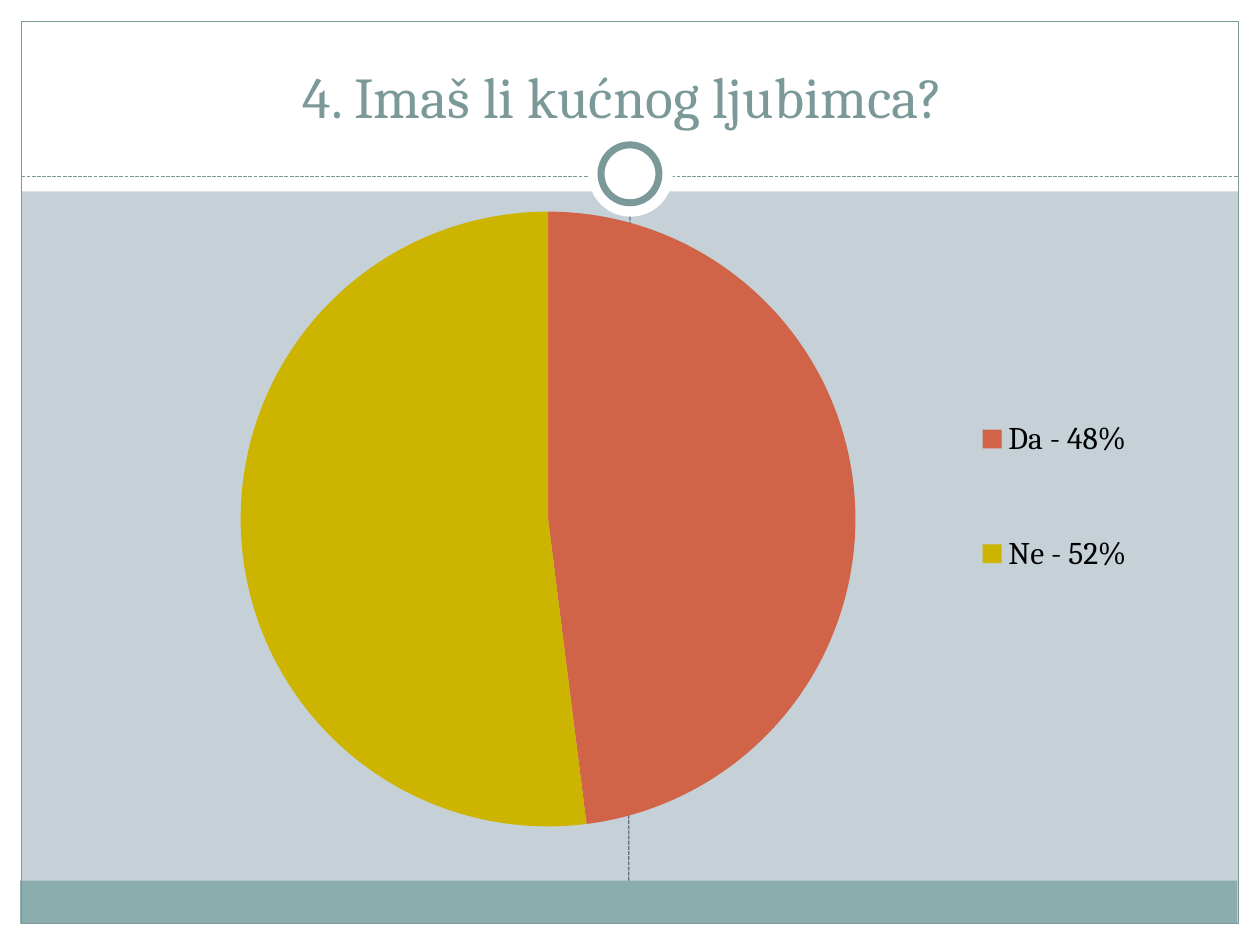
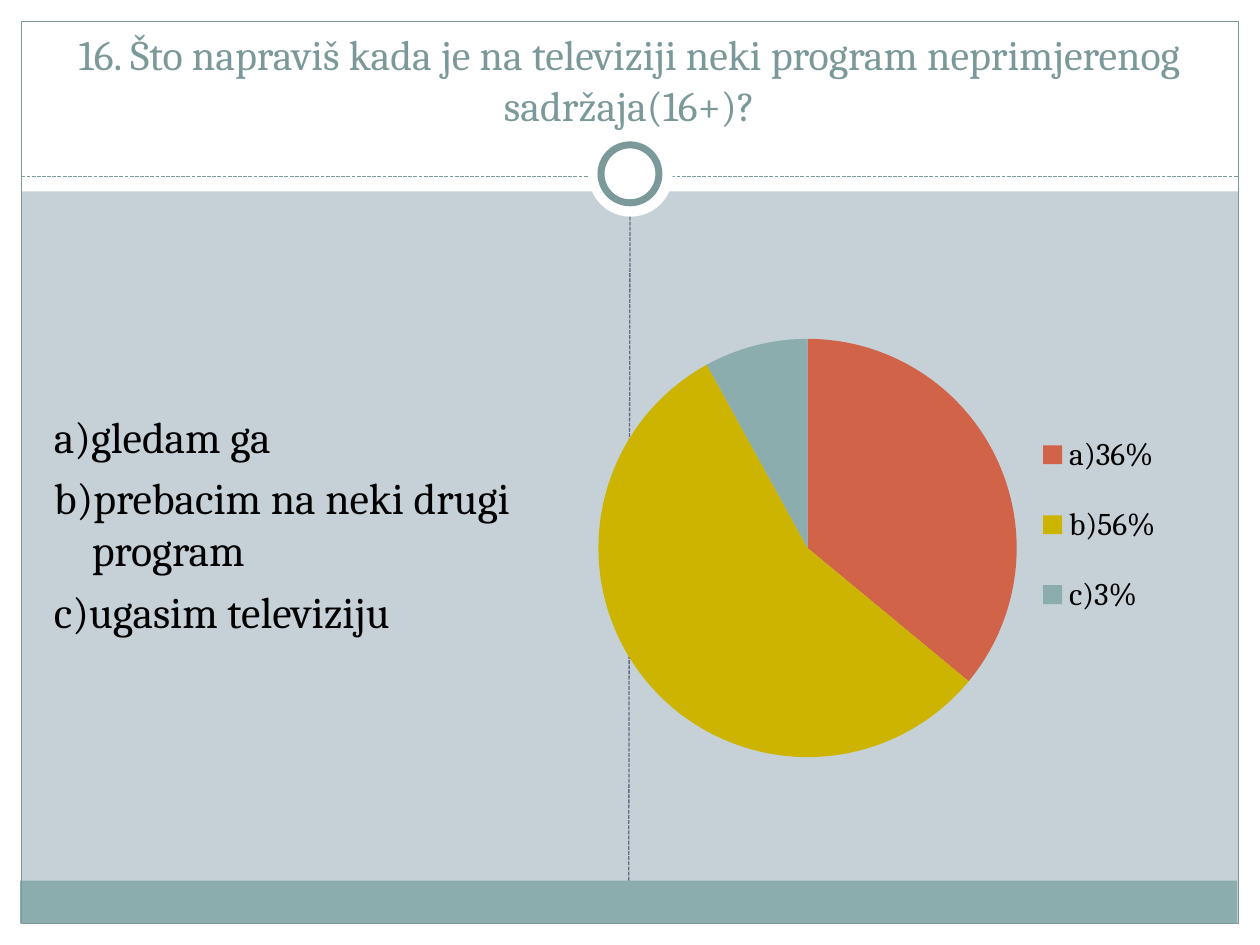
from lxml.etree import SubElement
from pptx import Presentation
from pptx.chart.data import CategoryChartData
from pptx.dml.color import RGBColor
from pptx.enum.chart import XL_CHART_TYPE, XL_LEGEND_POSITION
from pptx.enum.dml import MSO_LINE
from pptx.enum.shapes import MSO_CONNECTOR, MSO_SHAPE
from pptx.enum.text import MSO_ANCHOR, MSO_AUTO_SIZE, PP_ALIGN
from pptx.oxml.ns import qn
from pptx.util import Pt

EMU_PER_PX = 9144
WIDTH, HEIGHT = 1000, 750
EDGE = 17
HEADER = 152
FONT = "Cambria"

WHITE = RGBColor(0xFF, 0xFF, 0xFF)
BLACK = RGBColor(0x00, 0x00, 0x00)
BACKGROUND = RGBColor(0xC5, 0xD1, 0xD7)
SAGE = RGBColor(0x7C, 0x99, 0x9A)
TEAL = RGBColor(0x8C, 0xAD, 0xAE)
SLATE = RGBColor(0x64, 0x6B, 0x86)
RED = RGBColor(0xD1, 0x63, 0x49)
YELLOW = RGBColor(0xCC, 0xB4, 0x00)
SLICE_COLORS = (RED, YELLOW, TEAL)


class SurveyDeck:
    """Holds the survey style and the slide being built."""

    def __init__(self):
        self.deck = Presentation()
        self.deck.slide_width, self.deck.slide_height = self.emu(WIDTH, HEIGHT)
        self.page = None

    def emu(self, *lengths):
        return [length * EMU_PER_PX for length in lengths]

    def add_page(self, title, size):
        self.page = self.deck.slides.add_slide(self.deck.slide_layouts[5])
        self.page.background.fill.solid()
        self.page.background.fill.fore_color.rgb = BACKGROUND
        self.add_frame()
        self.add_title(title, size)

    def add_frame(self):
        inner_width = WIDTH - 2 * EDGE
        inner_height = HEIGHT - 2 * EDGE
        for band in (
            (0, HEIGHT - EDGE, WIDTH, EDGE),
            (0, 0, WIDTH, HEADER),
            (0, 0, EDGE, HEIGHT),
            (WIDTH - EDGE, 0, EDGE, HEIGHT),
        ):
            self.add_shape(MSO_SHAPE.RECTANGLE, band, WHITE)
        self.add_shape(MSO_SHAPE.RECTANGLE, (16, 699, inner_width, 34), TEAL)
        self.add_shape(
            MSO_SHAPE.RECTANGLE, (EDGE, EDGE, inner_width, inner_height), line=SAGE
        )
        self.add_dashed_line((EDGE, 140, WIDTH - EDGE, 140), SAGE)
        self.add_shape(MSO_SHAPE.OVAL, (467, 105, 67, 67), WHITE)
        self.add_shape(MSO_SHAPE.OVAL, (477, 115, 46, 46), WHITE, SAGE, 4)
        self.add_dashed_line((499, 699, 500, 172), SLATE)

    def add_shape(self, kind, box, fill=None, line=None, weight=0.75):
        shape = self.page.shapes.add_shape(kind, *self.emu(*box))
        shape.shadow.inherit = False
        if fill is None:
            shape.fill.background()
        else:
            shape.fill.solid()
            shape.fill.fore_color.rgb = fill
        if line is None:
            shape.line.fill.background()
        else:
            shape.line.color.rgb = line
            shape.line.width = Pt(weight)

    def add_dashed_line(self, ends, color):
        line = self.page.shapes.add_connector(MSO_CONNECTOR.STRAIGHT, *self.emu(*ends))
        line.line.color.rgb = color
        line.line.width = Pt(0.75)
        line.line.dash_style = MSO_LINE.SQUARE_DOT
        SubElement(line.element.spPr, qn("a:effectLst"))

    def style_font(self, font, size, color):
        font.name = FONT
        font.size = Pt(size)
        font.color.rgb = color

    def add_title(self, text, size):
        title = self.page.shapes.title
        title.element.getparent().append(title.element)
        title.left, title.top, title.width, title.height = self.emu(33, 25, 933, 83)
        frame = title.text_frame
        frame.text = text
        frame.word_wrap = True
        frame.auto_size = MSO_AUTO_SIZE.NONE
        frame.vertical_anchor = MSO_ANCHOR.BOTTOM
        para = frame.paragraphs[0]
        para.alignment = PP_ALIGN.CENTER
        self.style_font(para.font, size, SAGE)

    def add_answers(self, answers, box, size):
        frame = self.page.shapes.add_textbox(*self.emu(*box)).text_frame
        frame.word_wrap = True
        frame.text = "\n".join(answers)
        indent = 30 * EMU_PER_PX
        for para in frame.paragraphs:
            para.space_before = Pt(size * 0.2)
            self.style_font(para.font, size, BLACK)
            properties = para._p.get_or_add_pPr()
            properties.set("marL", str(indent))
            properties.set("indent", str(-indent))

    def add_pie(self, slices, box, pie_box, legend_box):
        data = CategoryChartData()
        data.categories = slices.keys()
        data.add_series("Series 1", slices.values())
        chart = self.page.shapes.add_chart(
            XL_CHART_TYPE.PIE, *self.emu(*box), data
        ).chart
        chart.has_title = False
        self.style_font(chart.font, 18, BLACK)
        chart.has_legend = True
        chart.legend.position = XL_LEGEND_POSITION.RIGHT
        chart.legend.include_in_layout = False
        plot = chart.plots[0]
        plot.vary_by_categories = True
        for index, color in zip(range(len(slices)), SLICE_COLORS):
            fill = plot.series[0].points[index].format.fill
            fill.solid()
            fill.fore_color.rgb = color

        plot_area = chart.element.find(".//" + qn("c:plotArea"))
        for layout in plot_area.findall(qn("c:layout")):
            plot_area.remove(layout)
        plot_layout = SubElement(plot_area, qn("c:layout"))
        plot_area.insert(0, plot_layout)
        self.fill_layout(plot_layout, box, pie_box, inner=True)

        legend_position = chart.element.find(".//" + qn("c:legendPos"))
        legend_layout = SubElement(legend_position.getparent(), qn("c:layout"))
        legend_position.addnext(legend_layout)
        self.fill_layout(legend_layout, box, legend_box)

    def fill_layout(self, layout, outer, box, inner=False):
        left, top, width, height = outer
        manual = SubElement(layout, qn("c:manualLayout"))
        if inner:
            SubElement(manual, qn("c:layoutTarget"), val="inner")
        for mode in ("xMode", "yMode"):
            SubElement(manual, qn("c:" + mode), val="edge")
        fractions = {
            "x": (box[0] - left) / width,
            "y": (box[1] - top) / height,
            "w": box[2] / width,
            "h": box[3] / height,
        }
        for name, fraction in fractions.items():
            SubElement(manual, qn("c:" + name), val=f"{fraction:.4f}")


def main():
    survey = SurveyDeck()

    survey.add_page("4. Imaš li kućnog ljubimca? ", 33)
    survey.add_pie(
        {"Da - 48%": 48, "Ne - 52%": 52},
        box=(59, 155, 891, 515),
        pie_box=(191, 168, 488, 488),
        legend_box=(772, 272, 130, 244),
    )

    survey.add_page(
        "16. Što napraviš kada je na televiziji neki program "
        "neprimjerenog sadržaja(16+)?",
        24,
    )
    survey.add_answers(
        ("a)gledam ga", "b)prebacim na neki drugi program", "c)ugasim televiziju"),
        box=(33, 320, 442, 342),
        size=25,
    )
    survey.add_pie(
        {"a)36%": 36, "b)56%": 56, "c)3%": 8},
        box=(461, 178, 474, 515),
        pie_box=(475, 269, 332, 332),
        legend_box=(820, 320, 105, 193),
    )

    survey.deck.save("out.pptx")


if __name__ == "__main__":
    main()
